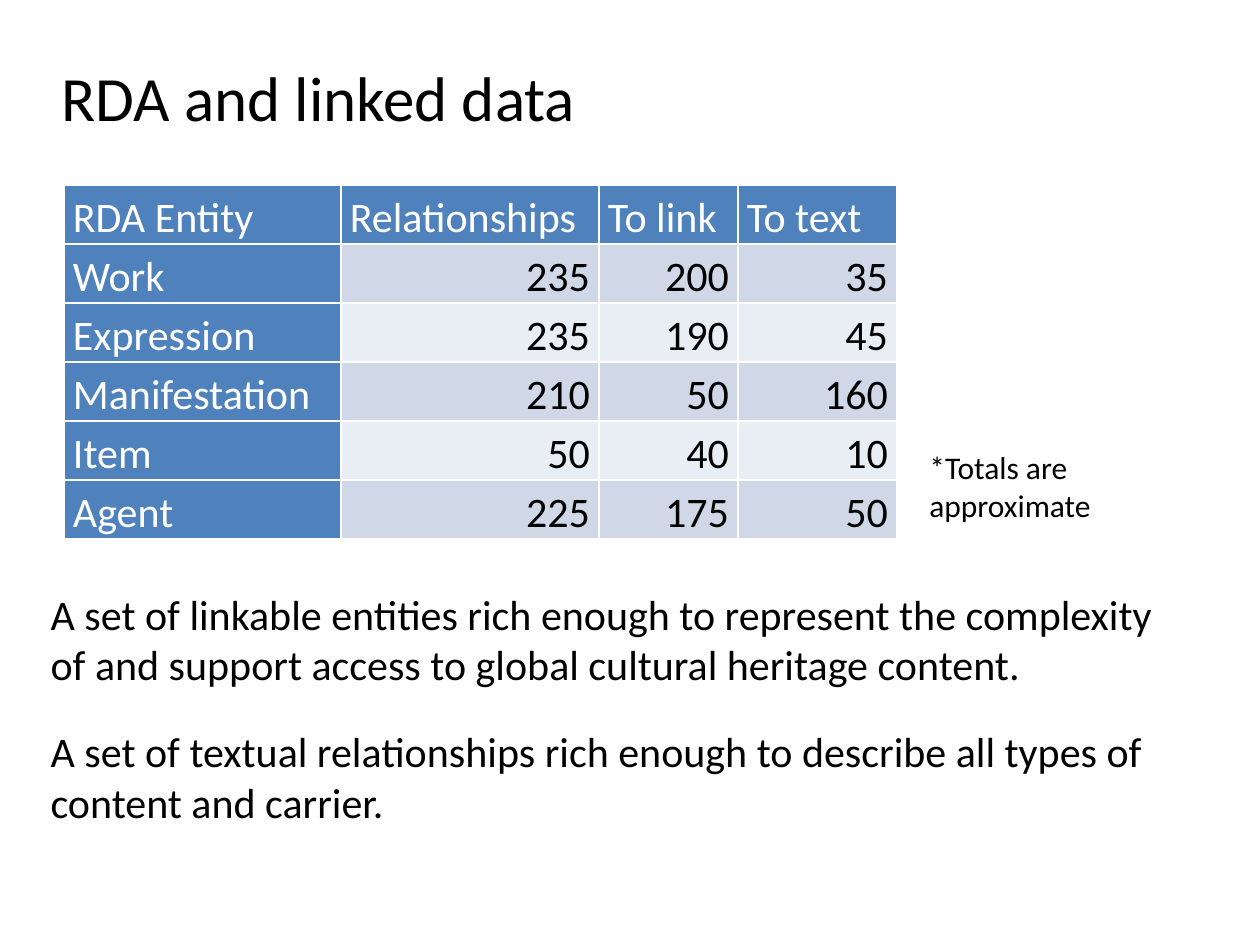
from lxml import etree
from pptx import Presentation
from pptx import util as u
from pptx.dml import color
from pptx.enum import text
from pptx.oxml import ns

PX = 914400 // 126
FONT = "Calibri"
WHITE, BLACK, BLUE = "FFFFFF", "000000", "4F81BD"
BANDS = ["D0D8E8", "E9EDF4"]

TITLE = "RDA and linked data"
ROWS = [
    ("RDA Entity", "Relationships", "To link", "To text"),
    ("Work", 235, 200, 35),
    ("Expression", 235, 190, 45),
    ("Manifestation", 210, 50, 160),
    ("Item", 50, 40, 10),
    ("Agent", 225, 175, 50),
]
COLUMN_WIDTHS = [277, 258, 139, 159]
ROW_HEIGHT = 59
NOTE = ["*Totals are", "approximate"]
STATEMENTS = [
    "A set of linkable entities rich enough to represent the complexity of "
    "and support access to global cultural heritage content.",
    "A set of textual relationships rich enough to describe all types of "
    "content and carrier.",
]


def px(value):
    return u.Emu(value * PX)


def rgb(value):
    return color.RGBColor.from_string(value)


def place(shape, left, top, width, height):
    shape.left, shape.top = px(left), px(top)
    shape.width, shape.height = px(width), px(height)


def write(frame, lines, size, colour=BLACK, align=text.PP_ALIGN.LEFT):
    frame.text = "\n".join(lines)
    for paragraph in frame.paragraphs:
        paragraph.alignment = align
        paragraph.space_before = u.Pt(0)
        for run in paragraph.runs:
            run.font.name = FONT
            run.font.size = u.Pt(size)
            run.font.bold = False
            run.font.color.rgb = rgb(colour)


def add_borders(cell, colour, points):
    properties = cell._tc.get_or_add_tcPr()
    for side in ("lnL", "lnR", "lnT", "lnB"):
        line = etree.SubElement(properties, ns.qn("a:" + side), w=str(u.Pt(points)))
        fill = etree.SubElement(line, ns.qn("a:solidFill"))
        etree.SubElement(fill, ns.qn("a:srgbClr"), val=colour)


def fill_cell(cell, value, row, column):
    heading = row == 0 or column == 0
    align = text.PP_ALIGN.LEFT if heading else text.PP_ALIGN.RIGHT
    write(cell.text_frame, [str(value)], 24, WHITE if heading else BLACK, align)
    cell.text_frame.paragraphs[0].line_spacing = 1.15
    cell.margin_left = cell.margin_right = px(9)
    cell.margin_top = cell.margin_bottom = 0
    add_borders(cell, WHITE, 1)
    cell.fill.solid()
    cell.fill.fore_color.rgb = rgb(BLUE if heading else BANDS[(row - 1) % 2])


def add_entity_table(slide, left, top):
    table = slide.shapes.add_table(
        len(ROWS), len(COLUMN_WIDTHS), px(left), px(top),
        px(sum(COLUMN_WIDTHS)), px(ROW_HEIGHT * len(ROWS))).table
    for column, width in enumerate(COLUMN_WIDTHS):
        table.columns[column].width = px(width)
    for row, values in enumerate(ROWS):
        table.rows[row].height = px(ROW_HEIGHT)
        for column, value in enumerate(values):
            fill_cell(table.cell(row, column), value, row, column)


def main():
    presentation = Presentation()
    presentation.slide_width, presentation.slide_height = px(1260), px(945)
    slide = presentation.slides.add_slide(presentation.slide_layouts[1])

    title, body = slide.placeholders
    place(title, 49, 52, 760, 89)
    write(title.text_frame, [TITLE], 36)

    place(body, 38, 582, 1148, 254)
    write(body.text_frame, STATEMENTS, 24)
    body.text_frame.vertical_anchor = text.MSO_ANCHOR.TOP
    for paragraph in body.text_frame.paragraphs:
        properties = paragraph._p.get_or_add_pPr()
        properties.set("marL", "0")
        properties.set("indent", "0")
        etree.SubElement(properties, ns.qn("a:buNone"))
    body.text_frame.paragraphs[1].space_before = u.Pt(21)

    add_entity_table(slide, 64, 185)

    note = slide.shapes.add_textbox(px(917), px(442), px(189), px(89))
    note.text_frame.word_wrap = True
    write(note.text_frame, NOTE, 18)

    presentation.save("out.pptx")


if __name__ == "__main__":
    main()
